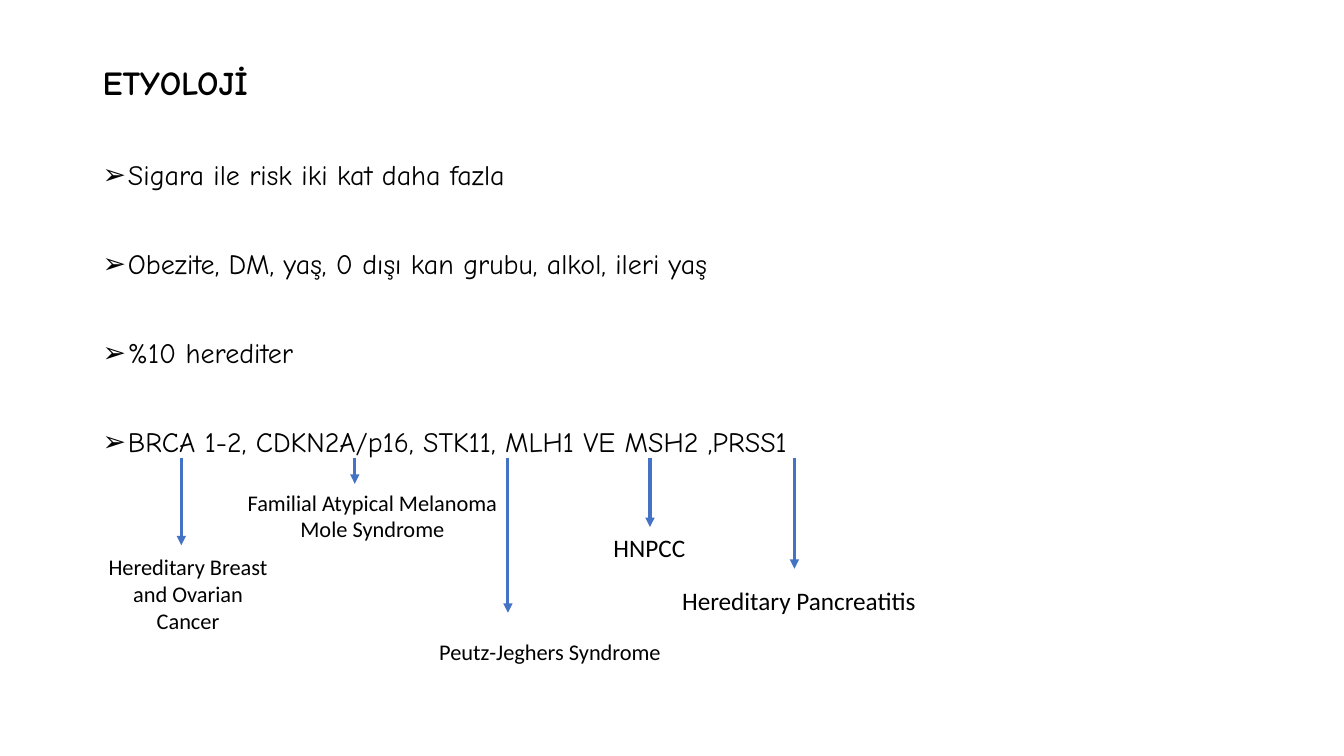
from lxml import etree
from pptx import Presentation, util as u
from pptx.dml.color import RGBColor
from pptx.enum import shapes, text
from pptx.oxml.ns import qn

BLACK = RGBColor(0x00, 0x00, 0x00)
BLUE = RGBColor(0x44, 0x72, 0xC4)

RISKS = [
    "Sigara ile risk iki kat daha fazla",
    "Obezite, DM, yaş, 0 dışı kan grubu, alkol, ileri yaş",
    "%10 herediter",
    "BRCA 1-2, CDKN2A/p16, STK11, MLH1 VE MSH2 ,PRSS1",
]

CENTER, LEFT = text.PP_ALIGN.CENTER, text.PP_ALIGN.LEFT
GENE_LINE_BOTTOM = 11.53
# lines, box (left, top, width, height), size, alignment, wrap, arrow x, arrow end
SYNDROMES = [
    (["Hereditary Breast and Ovarian Cancer"], (2.34, 13.82, 4.8, 2.31),
     16, CENTER, True, 4.57, 13.74),
    (["Familial Atypical Melanoma", "Mole Syndrome"], (5.89, 12.19, 6.99, 1.63),
     16, CENTER, False, 8.94, 12.19),
    (["Peutz-Jeghers Syndrome"], (10.82, 15.95, 6.17, 0.94),
     16, LEFT, False, 12.8, 15.44),
    (["HNPCC"], (15.21, 13.28, 2.34, 1.02), 18, LEFT, False, 16.38, 13.28),
    (["Hereditary Pancreatitis"], (16.94, 14.63, 6.48, 1.02),
     18, LEFT, False, 20.02, 14.33),
]


def set_all(target, values):
    for name, value in values.items():
        setattr(target, name, value)


class SlideBuilder:
    """Current slide together with its fonts and line style."""
    body_font = "Comic Neue"
    label_font = "Calibri"
    arrow_width = u.Pt(2.25)

    def __init__(self, slide):
        self.s = slide

    def box(self, left, top, width, height, wrap=True):
        sp = self.s.shapes.add_textbox(*map(u.Cm, (left, top, width, height)))
        sp.text_frame.word_wrap = wrap
        return sp

    def paragraph(self, tf, index, content, font, **values):
        p = tf.add_paragraph() if index else tf.paragraphs[0]
        set_all(p, values)
        r = p.add_run()
        r.text = content
        set_all(r.font, font)
        r.font.color.rgb = BLACK
        return p

    def bullet(self, p):
        pPr = p._p.get_or_add_pPr()
        pPr.set("marL", str(u.Cm(0.635)))
        pPr.set("indent", str(-u.Cm(0.635)))
        etree.SubElement(pPr, qn("a:buFont")).set("typeface", "Arial")
        etree.SubElement(pPr, qn("a:buChar")).set("char", "➢")

    def body(self, title, items):
        tf = self.box(2.34, 1.55, 29.21, 15.67).text_frame
        self.paragraph(tf, 0, title,
                       {"name": self.body_font, "size": u.Pt(24), "bold": True},
                       line_spacing=0.9, space_before=u.Pt(10))
        for i, item in enumerate(items, 1):
            p = self.paragraph(tf, i, item,
                               {"name": self.body_font, "size": u.Pt(20)},
                               line_spacing=0.9, space_before=u.Pt(42))
            self.bullet(p)

    def label(self, lines, place, size, align, wrap):
        sp = self.box(*place, wrap=wrap)
        sp.text_frame.auto_size = text.MSO_AUTO_SIZE.SHAPE_TO_FIT_TEXT
        for i, line in enumerate(lines):
            self.paragraph(sp.text_frame, i, line,
                           {"name": self.label_font, "size": u.Pt(size)},
                           alignment=align)
        return sp

    def down_arrow(self, x, top, bottom):
        c = self.s.shapes.add_connector(
            shapes.MSO_CONNECTOR.STRAIGHT, *map(u.Cm, (x, top, x, bottom)))
        c.line.color.rgb = BLUE
        c.line.width = self.arrow_width
        etree.SubElement(c.line._get_or_add_ln(), qn("a:tailEnd")).set("type", "triangle")
        etree.SubElement(c._element.spPr, qn("a:effectLst"))
        return c


def main():
    prs = Presentation()
    prs.slide_width, prs.slide_height = u.Cm(33.87), u.Cm(19.05)
    b = SlideBuilder(prs.slides.add_slide(prs.slide_layouts[6]))
    b.body("ETYOLOJİ", RISKS)
    for lines, place, size, align, wrap, x, end in SYNDROMES:
        sp = b.label(lines, place, size, align, wrap)
        c = b.down_arrow(x, GENE_LINE_BOTTOM, end)
        left, top, width, _ = place
        if end == top and abs(x - left - width / 2) < 0.01:
            c.end_connect(sp, 0)
    prs.save("out.pptx")


if __name__ == "__main__":
    main()
